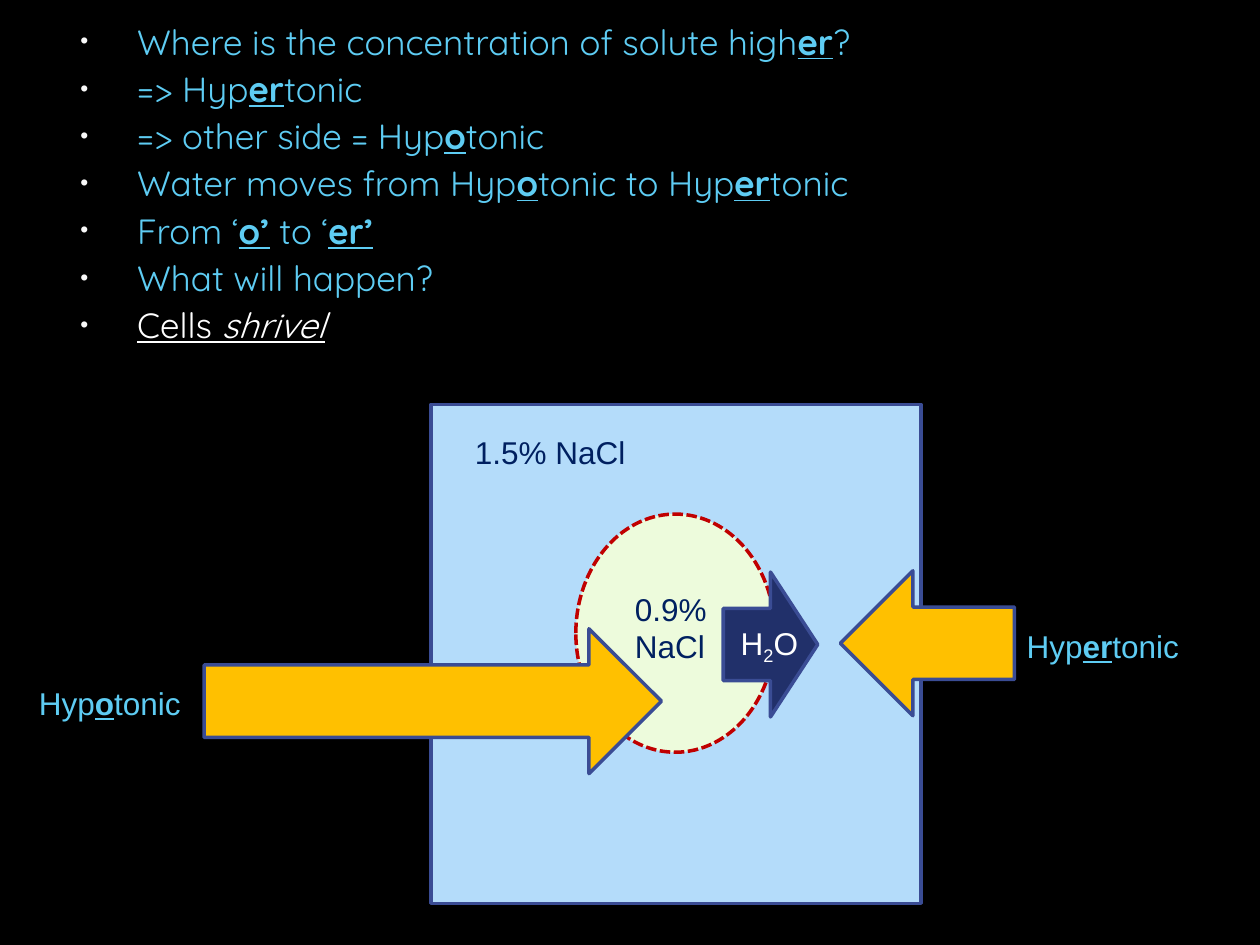
from dataclasses import dataclass

from lxml import etree
from pptx import Presentation
from pptx.dml.color import RGBColor
from pptx.enum import dml, shapes, text
from pptx.oxml import ns
from pptx.util import Inches, Pt

SKY, WHITE, NAVY = "5ECCF3", "FFFFFF", "002060"
OUTLINE, GOLD = "3A4C94", "FFC000"
PLAIN = {}
STRONG = {"bold": True, "underline": True}
UNDERLINED = {"underline": True}
SLANTED = {"underline": True, "italic": True}
SUBSCRIPT = {"baseline": "-25000"}
Line = list[tuple[str, dict]]


@dataclass
class Figure:
    preset: shapes.MSO_SHAPE
    box: tuple
    fill: str
    outline: str = OUTLINE
    dash: dml.MSO_LINE | None = None
    rotation: int = 0


@dataclass
class Label:
    box: tuple
    lines: list[Line]
    color: str


def rgb(value: str) -> RGBColor:
    return RGBColor.from_string(value)


def marked(line: str) -> Line:
    return [(part, STRONG if i % 2 else PLAIN)
            for i, part in enumerate(line.split("*")) if part]


def write_line(paragraph, line: Line, font_name: str, size: int, color: str) -> None:
    for words, style in line:
        run = paragraph.add_run()
        run.text = words
        run.font.color.rgb = rgb(color)
        for key, value in {"name": font_name, "size": Pt(size), **style}.items():
            if key == "baseline":
                run.font._element.set(key, value)
            else:
                setattr(run.font, key, value)


def add_bullet(paragraph) -> None:
    properties = paragraph._p.get_or_add_pPr()
    properties.set("marL", str(Inches(0.6)))
    properties.set("indent", str(Inches(-0.45)))
    bullet_color = etree.SubElement(properties, ns.qn("a:buClr"))
    etree.SubElement(bullet_color, ns.qn("a:srgbClr"), val="F9F9F9")
    etree.SubElement(properties, ns.qn("a:buSzPct"), val="65000")
    etree.SubElement(properties, ns.qn("a:buFont"), typeface="Arial")
    etree.SubElement(properties, ns.qn("a:buChar"), char="•")


def draw_notes(slide, lines: list[tuple[Line, str]]) -> None:
    frame = slide.shapes.add_textbox(*map(Inches, (0.39, 0.11, 9.42, 3.08))).text_frame
    frame.word_wrap = True
    for i, (line, color) in enumerate(lines):
        paragraph = frame.add_paragraph() if i else frame.paragraphs[0]
        add_bullet(paragraph)
        if i:
            paragraph.space_before = Pt(3)
        write_line(paragraph, line, "Quicksand", 20, color)


def draw_figure(slide, figure: Figure) -> None:
    shape = slide.shapes.add_shape(figure.preset, *map(Inches, figure.box))
    shape.shadow.inherit = False
    shape.rotation = figure.rotation
    shape.fill.solid()
    shape.fill.fore_color.rgb = rgb(figure.fill)
    shape.line.color.rgb = rgb(figure.outline)
    shape.line.width = Pt(2)
    if figure.dash:
        shape.line.dash_style = figure.dash


def draw_label(slide, label: Label) -> None:
    frame = slide.shapes.add_textbox(*map(Inches, label.box)).text_frame
    frame.word_wrap = False
    frame.auto_size = text.MSO_AUTO_SIZE.SHAPE_TO_FIT_TEXT
    for i, line in enumerate(label.lines):
        paragraph = frame.add_paragraph() if i else frame.paragraphs[0]
        write_line(paragraph, line, "Arial", 18, label.color)


NOTES = [(marked(line), SKY) for line in (
    "Where is the concentration of solute high*er*?",
    "=> Hyp*er*tonic",
    "=> other side = Hyp*o*tonic",
    "Water moves from Hyp*o*tonic to Hyp*er*tonic",
    "From ‘*o’* to ‘*er’*",
    "What will happen?",
)] + [([("Cells ", UNDERLINED), ("shrivel", SLANTED)], WHITE)]

ARROW = shapes.MSO_SHAPE.RIGHT_ARROW
DIAGRAM = [
    Figure(shapes.MSO_SHAPE.RECTANGLE, (3.42, 3.21, 3.89, 3.96), "B4DCFA"),
    Label((8.05, 4.93, 1.42, 0.4), [marked("Hyp*er*tonic")], SKY),
    Label((0.21, 5.38, 1.34, 0.4), [marked("Hyp*o*tonic")], SKY),
    Figure(shapes.MSO_SHAPE.OVAL, (4.57, 4.08, 1.58, 1.89), "EDFBDC", "C00000",
           dml.MSO_LINE.SQUARE_DOT),
    Figure(ARROW, (6.67, 4.53, 1.38, 1.15), GOLD, rotation=180),
    Figure(ARROW, (5.74, 4.54, 0.75, 1.15), "21306A"),
    Label((5.78, 4.9, 0.67, 0.4),
          [[("H", PLAIN), ("2", SUBSCRIPT), ("O", PLAIN)]], WHITE),
    Label((3.67, 3.39, 1.41, 0.4), [marked("1.5% NaCl")], NAVY),
    Label((4.94, 4.63, 0.85, 0.71), [marked("0.9%"), marked("NaCl")], NAVY),
    Figure(ARROW, (1.62, 4.99, 3.63, 1.15), GOLD),
]


def main() -> None:
    deck = Presentation()
    deck.slide_width, deck.slide_height = Inches(10), Inches(7.5)
    slide = deck.slides.add_slide(deck.slide_layouts[6])
    slide.background.fill.solid()
    slide.background.fill.fore_color.rgb = rgb("000000")
    draw_notes(slide, NOTES)
    for part in DIAGRAM:
        draw = draw_figure if isinstance(part, Figure) else draw_label
        draw(slide, part)
    deck.save("out.pptx")


if __name__ == "__main__":
    main()
